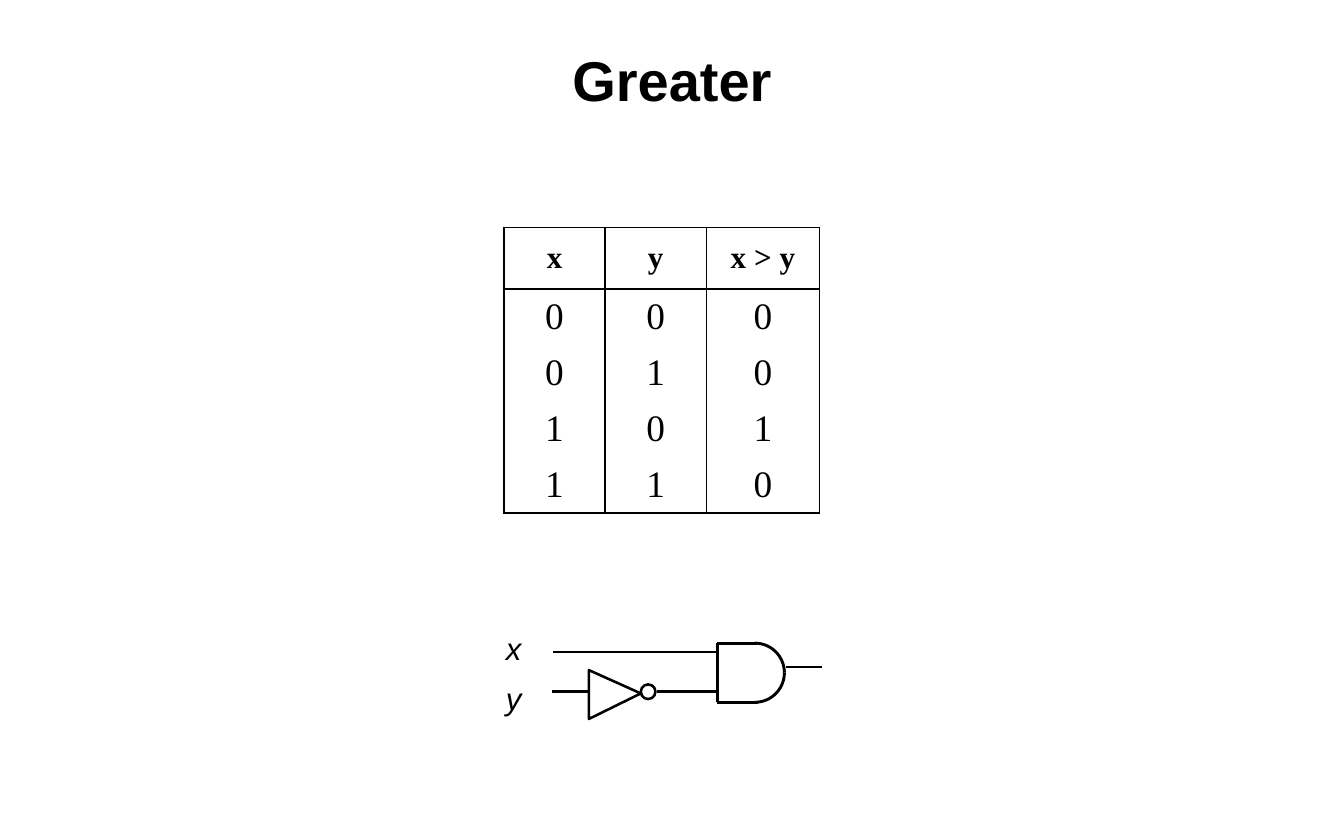
import math
from dataclasses import dataclass

from lxml import etree
from pptx import Presentation, util as u
from pptx.dml import color
from pptx.enum import shapes, text
from pptx.oxml import ns


@dataclass(frozen=True)
class Theme:
    ink: color.RGBColor = color.RGBColor(0, 0, 0)
    paper: color.RGBColor = color.RGBColor(255, 255, 255)
    sans: str = "Arial"
    serif: str = "Times New Roman"
    title: float = 36
    head: float = 20
    body: float = 24
    label: float = 20
    wire: float = 1.63
    gate: float = 1.88
    border: float = 1


@dataclass(frozen=True)
class Line:
    x1: float
    y1: float
    x2: float
    y2: float
    width: float


@dataclass(frozen=True)
class Label:
    name: str
    top: float


THEME = Theme()
GATE_LEFT, GATE_TOP, GATE_BOTTOM = 461, 413.5, 451.5
GATE_MIDDLE = (GATE_TOP + GATE_BOTTOM) / 2
ARC_LEFT, ARC_RADIUS = 485.3, 19
X_WIRE, Y_WIRE = 419.3, 444.6

LINES = [
    Line(528.5, 428.9, 505.3, 428.9, THEME.wire),
    Line(460, Y_WIRE, 422.5, Y_WIRE, THEME.wire),
    Line(460, X_WIRE, 355.7, X_WIRE, THEME.wire),
    Line(355, Y_WIRE, 379.2, Y_WIRE, THEME.wire),
    Line(486.7, GATE_TOP, GATE_LEFT, GATE_TOP, THEME.gate),
    Line(GATE_LEFT, GATE_TOP, GATE_LEFT, GATE_BOTTOM, THEME.gate),
    Line(GATE_LEFT, GATE_BOTTOM, 487.4, GATE_BOTTOM, THEME.gate),
]
LABELS = [Label("x", 401), Label("y", 433.4)]
TRUTH_TABLE = [("x", "y", "x > y")] + [
    (str(x), str(y), str(int(x > y))) for x in (0, 1) for y in (0, 1)
]
COLUMN_WIDTHS = [65, 65, 73]
ROW_HEIGHTS = [39.6] + [36] * 4


def write(frame, content: str, *, size: float, font: str, bold=False,
          italic=False, align=text.PP_ALIGN.LEFT, before: float = 0) -> None:
    para = frame.paragraphs[0]
    para.alignment = align
    para.space_before = u.Pt(before)
    span = para.add_run()
    span.text = content
    span.font.size = u.Pt(size)
    span.font.name = font
    span.font.bold = bold
    span.font.italic = italic
    span.font.color.rgb = THEME.ink


def draw_title(page, content: str) -> None:
    box = page.shapes.title
    box.left, box.top, box.width, box.height = map(u.Pt, (0, 24, 864, 54))
    box.text_frame.vertical_anchor = text.MSO_ANCHOR.MIDDLE
    write(box.text_frame, content, size=THEME.title, font=THEME.sans,
          bold=True, align=text.PP_ALIGN.CENTER)


def set_borders(cell, visible: str) -> None:
    """Rule the sides named by letters in visible (L, R, T, B); clear the rest."""
    properties = cell._tc.get_or_add_tcPr()
    for side in "LRTB":
        edge = etree.SubElement(properties, ns.qn(f"a:ln{side}"),
                                w=str(u.Pt(THEME.border)))
        if side in visible:
            fill = etree.SubElement(edge, ns.qn("a:solidFill"))
            etree.SubElement(fill, ns.qn("a:srgbClr"), val=str(THEME.ink))
        else:
            etree.SubElement(edge, ns.qn("a:noFill"))


def draw_table(page) -> None:
    frame = page.shapes.add_table(
        len(ROW_HEIGHTS), len(COLUMN_WIDTHS), u.Pt(324), u.Pt(146.2),
        u.Pt(sum(COLUMN_WIDTHS)), u.Pt(sum(ROW_HEIGHTS)))
    table = frame.table
    table.first_row = table.horz_banding = False
    for column, width in zip(table.columns, COLUMN_WIDTHS):
        column.width = u.Pt(width)
    for index, (row, height) in enumerate(zip(table.rows, ROW_HEIGHTS)):
        row.height = u.Pt(height)
        head = index == 0
        sides = "LR" + "T" * (index < 2) + "B" * (index in (0, len(ROW_HEIGHTS) - 1))
        for cell, value in zip(row.cells, TRUTH_TABLE[index]):
            set_borders(cell, sides)
            cell.fill.background()
            cell.vertical_anchor = text.MSO_ANCHOR.MIDDLE
            write(cell.text_frame, value, size=THEME.head if head else THEME.body,
                  font=THEME.serif, bold=head, align=text.PP_ALIGN.CENTER,
                  before=6 if head else 12)


def draw_line(page, line: Line) -> None:
    connector = page.shapes.add_connector(
        shapes.MSO_CONNECTOR.STRAIGHT,
        *map(u.Pt, (line.x1, line.y1, line.x2, line.y2)))
    connector.line.color.rgb = THEME.ink
    connector.line.width = u.Pt(line.width)
    etree.SubElement(connector._element.spPr, ns.qn("a:effectLst"))


def format_outline(shape, width: float, filled: bool) -> None:
    shape.shadow.inherit = False
    if filled:
        shape.fill.solid()
        shape.fill.fore_color.rgb = THEME.paper
    else:
        shape.fill.background()
    shape.line.color.rgb = THEME.ink
    shape.line.width = u.Pt(width)


def draw_path(page, points: list[tuple[float, float]], width: float,
              closed: bool) -> None:
    start, *rest = [(u.Pt(x), u.Pt(y)) for x, y in points]
    builder = page.shapes.build_freeform(*start)
    builder.add_line_segments(rest, close=closed)
    format_outline(builder.convert_to_shape(), width, filled=closed)


def draw_quarter_arc(page, direction: int) -> None:
    """Draw the upper (-1) or lower (1) half of the AND gate's round side."""
    angles = [math.radians(step * 5) for step in range(19)]
    points = [(ARC_LEFT + ARC_RADIUS * math.sin(angle),
               GATE_MIDDLE + direction * ARC_RADIUS * math.cos(angle))
              for angle in angles]
    draw_path(page, points, THEME.gate, closed=False)


def draw_inverter(page) -> None:
    draw_path(page, [(412, 445.8), (378.6, 462.2), (378.6, 430.8)],
              THEME.wire, closed=True)
    bubble = page.shapes.add_shape(
        shapes.MSO_SHAPE.OVAL, *map(u.Pt, (412, 440, 9.4, 9.4)))
    format_outline(bubble, THEME.wire, filled=False)


def draw_label(page, label: Label) -> None:
    box = page.shapes.add_textbox(*map(u.Pt, (318.2, label.top, 24.5, 31.7)))
    box.text_frame.word_wrap = False
    box.text_frame.auto_size = text.MSO_AUTO_SIZE.SHAPE_TO_FIT_TEXT
    write(box.text_frame, label.name, size=THEME.label, font=THEME.sans,
          italic=True)


def main() -> None:
    deck = Presentation()
    deck.slide_width, deck.slide_height = u.Pt(864), u.Pt(540)
    page = deck.slides.add_slide(deck.slide_layouts[5])
    draw_title(page, "Greater")
    draw_table(page)
    for line in LINES:
        draw_line(page, line)
    for direction in (-1, 1):
        draw_quarter_arc(page, direction)
    draw_inverter(page)
    for label in LABELS:
        draw_label(page, label)
    deck.save("out.pptx")


if __name__ == "__main__":
    main()
